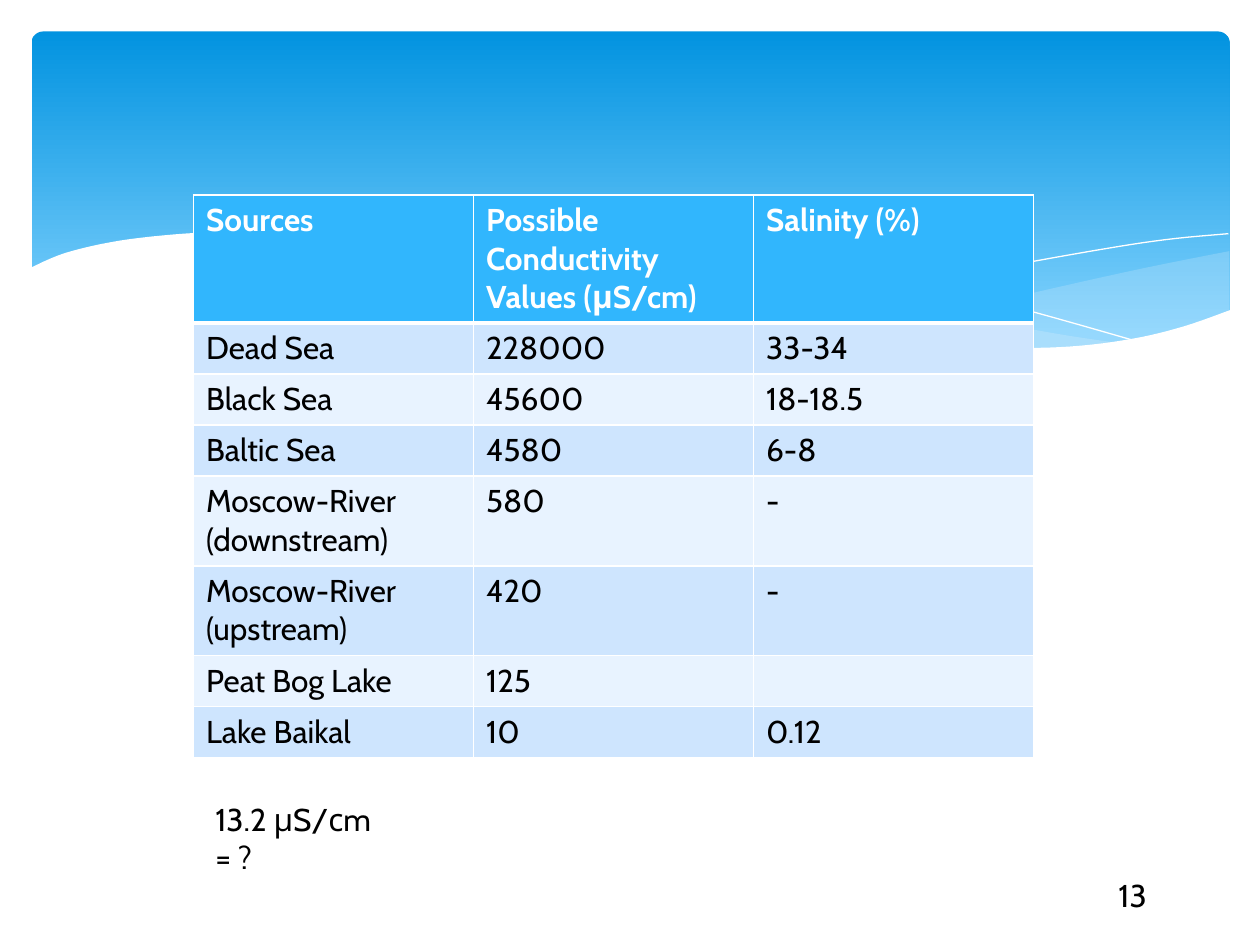
from lxml import etree
from pptx import Presentation
from pptx.dml.color import RGBColor
from pptx.enum.shapes import MSO_SHAPE
from pptx.oxml.ns import qn
from pptx.util import Pt

ROUNDED = MSO_SHAPE.ROUNDED_RECTANGLE
FONT = "Cabin"
WHITE = RGBColor(0xFF, 0xFF, 0xFF)
BLACK = RGBColor(0x00, 0x00, 0x00)
SKY_TOP = RGBColor(0x02, 0x93, 0xE0)
SKY_BOTTOM = RGBColor(0x83, 0xD3, 0xFE)
MIST = RGBColor(0xC6, 0xE7, 0xFC)
HEADER_BLUE = RGBColor(0x31, 0xB6, 0xFD)
BAND_DARK = RGBColor(0xCE, 0xE5, 0xFE)
BAND_LIGHT = RGBColor(0xE8, 0xF3, 0xFF)

RIGHT_SWELL = [
    [(686, 11), (636, 21), (582, 33), (526, 46), (459, 58)],
    [(459, 58), (501, 63), (537, 67), (570, 68), (605, 65.5), (641, 60),
     (667, 52.5), (686, 45)],
]
LONG_SWELL = [
    [(189, 5), (243, 1), (286, 2), (335, 8.5), (393, 17), (436, 27),
     (517, 45), (586, 58), (626, 64)],
    [(626, 64), (594, 67), (557, 68), (513, 65.5), (462, 59), (404, 49),
     (337, 34.5), (274, 19.5), (230, 11), (189, 5)],
]
FALLING_CREST = [
    [(206, 8), (238, 3.5), (283, 2), (351, 6), (421, 14.5), (484, 25),
     (556, 41), (636.5, 63.5)],
]
RISING_CREST = [
    [(425, 52.5), (484, 36.5), (542, 23), (607, 11), (649, 4.5), (685.5, 1)],
]
FOREGROUND = [
    [(0, 21), (21, 12), (52, 5), (89, 1), (122, 0), (163, 1.5), (211, 7),
     (265, 16.5), (305, 26), (364, 39.5), (434, 53), (493, 62), (554, 66),
     (595, 65.5), (631, 61), (660, 54), (687, 44.5)],
    [(687, 104.5), (0, 104.5)],
]

HEADINGS = ["Sources", "Possible Conductivity Values (μS/cm)", "Salinity (%)"]
READINGS = [
    ["Dead Sea", "228000", "33-34"],
    ["Black Sea", "45600", "18-18.5"],
    ["Baltic Sea", "4580", "6-8"],
    ["Moscow-River (downstream)", "580", "-"],
    ["Moscow-River (upstream)", "420", "-"],
    ["Peat Bog Lake", "125", ""],
    ["Lake Baikal", "10", "0.12"],
]


def smooth_curve(knots, steps=6):
    padded = [knots[0], *knots, knots[-1]]
    curve = [knots[0]]
    for a, b, c, d in zip(padded, padded[1:], padded[2:], padded[3:]):
        for step in range(1, steps + 1):
            t = step / steps
            curve.append(tuple(
                0.5 * (2 * q + (r - p) * t + (2 * p - 5 * q + 4 * r - s) * t**2
                       + (3 * q - p - 3 * r + s) * t**3)
                for p, q, r, s in zip(a, b, c, d)))
    return curve


def add_wave(slide, left, top, curves, color, opacity=100, closed=True):
    points = [(Pt(left + x), Pt(top + y))
              for knots in curves for x, y in smooth_curve(knots)]
    builder = slide.shapes.build_freeform(*points[0], scale=1.0)
    builder.add_line_segments(points[1:], close=closed)
    wave = builder.convert_to_shape()
    wave.shadow.inherit = False
    if not closed:
        wave.fill.background()
        wave.line.color.rgb = color
        wave.line.width = Pt(0)
        return
    wave.line.fill.background()
    wave.fill.solid()
    wave.fill.fore_color.rgb = color
    if opacity < 100:
        tint = wave.fill._xPr.find(".//" + qn("a:srgbClr"))
        etree.SubElement(tint, qn("a:alpha"), val=str(opacity * 1000))


def add_sky(slide, left, top, width, height):
    sky = slide.shapes.add_shape(ROUNDED, Pt(left), Pt(top), Pt(width), Pt(height))
    sky.adjustments[0] = 0.034
    sky.shadow.inherit = False
    sky.line.fill.background()
    sky.fill.gradient()
    sky.fill.gradient_angle = 270
    for stop, position, color in zip(sky.fill.gradient_stops, (0, 0.9),
                                     (SKY_TOP, SKY_BOTTOM)):
        stop.position = position
        stop.color.rgb = color


def add_waves(slide, left, top):
    add_wave(slide, left, top, RIGHT_SWELL, MIST, opacity=29)
    add_wave(slide, left, top, LONG_SWELL, MIST, opacity=40)
    for crest in (FALLING_CREST, RISING_CREST):
        add_wave(slide, left, top, crest, WHITE, closed=False)
    add_wave(slide, left, top, FOREGROUND, WHITE)


def style_text(text_frame, color, bold=False):
    for paragraph in text_frame.paragraphs:
        for run in paragraph.runs:
            run.font.name = FONT
            run.font.size = Pt(18)
            run.font.bold = bold
            run.font.color.rgb = color


def set_borders(cell, widths):
    properties = cell._tc.get_or_add_tcPr()
    for index, (side, width) in enumerate(widths.items()):
        border = etree.Element(qn("a:ln" + side), w=str(Pt(width)))
        fill = etree.SubElement(border, qn("a:solidFill"))
        etree.SubElement(fill, qn("a:srgbClr"), val=str(WHITE))
        properties.insert(index, border)


def add_readings(slide, left, top, width, header_height, row_height):
    rows = [HEADINGS, *READINGS]
    table = slide.shapes.add_table(
        len(rows), len(HEADINGS), Pt(left), Pt(top), Pt(width),
        Pt(header_height + row_height * len(READINGS))).table
    for column in table.columns:
        column.width = Pt(width / len(HEADINGS))
    for r, values in enumerate(rows):
        header = r == 0
        table.rows[r].height = Pt(header_height if header else row_height)
        band = HEADER_BLUE if header else BAND_DARK if r % 2 else BAND_LIGHT
        for cell, value in zip(table.rows[r].cells, values):
            cell.text_frame.text = value
            style_text(cell.text_frame, WHITE if header else BLACK, bold=header)
            cell.fill.solid()
            cell.fill.fore_color.rgb = band
            set_borders(cell, {"L": 1, "R": 1, "T": 3 if r == 1 else 1,
                               "B": 3 if header else 1})


def add_label(slide, left, top, width, height, text):
    label = slide.shapes.add_textbox(Pt(left), Pt(top), Pt(width), Pt(height))
    label.text_frame.word_wrap = True
    label.text_frame.text = text
    style_text(label.text_frame, BLACK)


def main():
    deck = Presentation()
    deck.slide_width, deck.slide_height = Pt(720), Pt(540)
    slide = deck.slides.add_slide(deck.slide_layouts[6])
    add_sky(slide, 18, 18, 684.7, 194.4)
    add_waves(slide, 16.5, 132.5)
    add_readings(slide, 110.6, 111.4, 480, 71.3, 29)
    add_label(slide, 632, 497, 45.4, 29, "13")
    add_label(slide, 116, 453.6, 124.6, 29, "13.2 μS/сm = ?")
    deck.save("out.pptx")


if __name__ == "__main__":
    main()
